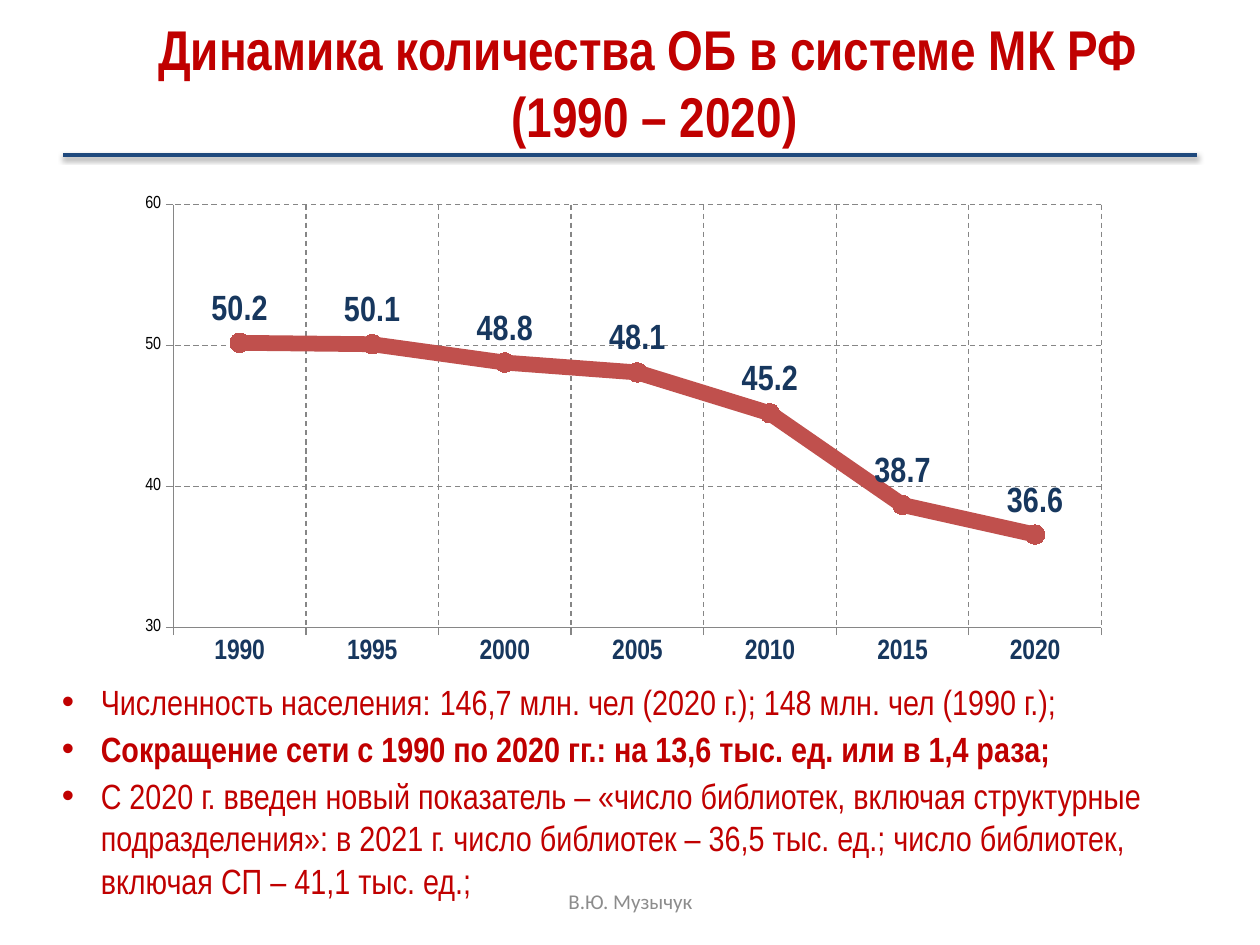
from lxml import etree
from pptx import Presentation
from pptx.chart.data import CategoryChartData
from pptx.dml.color import RGBColor
from pptx.enum.chart import XL_CHART_TYPE as ChartType, XL_LABEL_POSITION as LabelPosition
from pptx.enum.chart import XL_MARKER_STYLE as MarkerStyle, XL_TICK_MARK as TickMark
from pptx.enum.dml import MSO_LINE
from pptx.enum.shapes import MSO_CONNECTOR
from pptx.enum.text import MSO_ANCHOR, MSO_AUTO_SIZE, PP_ALIGN
from pptx.oxml import parse_xml
from pptx.oxml.ns import nsdecls, qn
from pptx.util import Inches, Pt

RED = RGBColor(0xC0, 0x00, 0x00)
NAVY = RGBColor(0x17, 0x37, 0x5E)
BLUE = RGBColor(0x1F, 0x49, 0x7D)
SERIES_RED = RGBColor(0xC0, 0x50, 0x4D)
GRID_GRAY = RGBColor(0x86, 0x86, 0x86)
FOOTER_GRAY = RGBColor(0x8C, 0x8C, 0x8C)
BLACK = RGBColor(0x00, 0x00, 0x00)
NARROW = "Arial Narrow"


def set_font(font, name, size, color, bold=False):
    font.name = name
    font.size = Pt(size)
    font.bold = bold
    font.color.rgb = color


def place(shape, left, top, width, height):
    shape.left, shape.top = Inches(left), Inches(top)
    shape.width, shape.height = Inches(width), Inches(height)


presentation = Presentation()
presentation.slide_width = Inches(10)
presentation.slide_height = Inches(7.5)
slide = presentation.slides.add_slide(presentation.slide_layouts[1])

title = slide.shapes.title
place(title, 0.39, 0.06, 9.61, 1.18)
title.text_frame.text = "Динамика количества ОБ в системе МК РФ \n(1990 – 2020)"
title.text_frame.auto_size = MSO_AUTO_SIZE.NONE
title.text_frame.vertical_anchor = MSO_ANCHOR.MIDDLE
for paragraph in title.text_frame.paragraphs:
    paragraph.alignment = PP_ALIGN.CENTER
    set_font(paragraph.font, NARROW, 32, RED, bold=True)

rule = slide.shapes.add_connector(
    MSO_CONNECTOR.STRAIGHT, Inches(0.5), Inches(1.23), Inches(9.5), Inches(1.23))
rule.line.color.rgb = BLUE
rule.line.width = Pt(2)
rule_properties = rule._element.spPr
effects = etree.SubElement(rule_properties, qn("a:effectLst"))
shadow = etree.SubElement(
    effects, qn("a:outerShdw"), blurRad=str(Pt(3.1)), dist=str(Pt(1.6)),
    dir="5400000", rotWithShape="0")
shadow_color = etree.SubElement(shadow, qn("a:srgbClr"), val="000000")
etree.SubElement(shadow_color, qn("a:alpha"), val="38000")

chart_data = CategoryChartData(number_format="0.0")
chart_data.categories = [str(year) for year in range(1990, 2021, 5)]
chart_data.add_series("Series 1", (50.2, 50.1, 48.8, 48.1, 45.2, 38.7, 36.6))
chart = slide.shapes.add_chart(
    ChartType.LINE_MARKERS, Inches(0.98), Inches(1.47), Inches(7.92), Inches(3.86),
    chart_data).chart
chart.has_title = False
chart.has_legend = False
set_font(chart.font, "Calibri", 10, BLACK)

category_axis, value_axis = chart.category_axis, chart.value_axis
value_axis.minimum_scale, value_axis.maximum_scale = 30, 60
value_axis.major_unit = 10
value_axis.tick_labels.number_format = "0"
value_axis.tick_labels.number_format_is_linked = False
set_font(category_axis.tick_labels.font, NARROW, 16, NAVY, bold=True)
set_font(value_axis.tick_labels.font, NARROW, 10, BLACK)
for axis in (category_axis, value_axis):
    axis.major_tick_mark = TickMark.OUTSIDE
    axis.minor_tick_mark = TickMark.NONE
    axis.format.line.color.rgb = GRID_GRAY
    axis.has_major_gridlines = True
    gridline = axis.major_gridlines.format.line
    gridline.color.rgb = GRID_GRAY
    gridline.width = Pt(0.75)
    gridline.dash_style = MSO_LINE.DASH

plot = chart.plots[0]
plot.vary_by_categories = False
series = plot.series[0]
series.smooth = False
series.format.line.color.rgb = SERIES_RED
series.format.line.width = Pt(9)
series.marker.style = MarkerStyle.CIRCLE
series.marker.size = 11
series.marker.format.fill.solid()
series.marker.format.fill.fore_color.rgb = SERIES_RED
series.marker.format.line.color.rgb = SERIES_RED
labels = series.data_labels
labels.show_value = True
labels.position = LabelPosition.ABOVE
labels.number_format = "0.0"
labels.number_format_is_linked = False
set_font(labels.font, NARROW, 20, NAVY, bold=True)

plot_area = chart._chartSpace.find(".//" + qn("c:plotArea"))
for layout in plot_area.findall(qn("c:layout")):
    plot_area.remove(layout)
plot_area.insert(0, parse_xml(
    f'<c:layout {nsdecls("c")}><c:manualLayout><c:layoutTarget val="inner"/>'
    '<c:xMode val="edge"/><c:yMode val="edge"/><c:x val="0.05"/><c:y val="0.04"/>'
    '<c:w val="0.93"/><c:h val="0.87"/></c:manualLayout></c:layout>'))

facts = [
    ("Численность населения: \t146,7 млн. чел (2020 г.); 148 млн. чел (1990 г.);", False),
    ("Сокращение сети с 1990 по 2020 гг.: на 13,6 тыс. ед. или в 1,4 раза;", True),
    ("С 2020 г. введен новый показатель – «число библиотек, включая структурные "
     "подразделения»: в 2021 г. число библиотек – 36,5 тыс. ед.; число библиотек, "
     "включая СП – 41,1 тыс. ед.;", False),
]
body = slide.placeholders[1]
place(body, 0.39, 5.35, 9.41, 1.87)
body.text_frame.text = "\n".join(text for text, bold in facts)
body.text_frame.auto_size = MSO_AUTO_SIZE.NONE
for paragraph, (text, bold) in zip(body.text_frame.paragraphs, facts):
    paragraph.space_before = Pt(3)
    set_font(paragraph.font, NARROW, 20, RED, bold)
    properties = paragraph._p.get_or_add_pPr()
    properties.set("marL", str(Inches(0.31)))
    properties.set("indent", str(Inches(-0.31)))

footer = slide.shapes.add_textbox(Inches(3.42), Inches(6.95), Inches(3.17), Inches(0.4))
footer.text_frame.word_wrap = True
footer.text_frame.vertical_anchor = MSO_ANCHOR.MIDDLE
footer.text_frame.text = "В.Ю. Музычук"
paragraph = footer.text_frame.paragraphs[0]
paragraph.alignment = PP_ALIGN.CENTER
set_font(paragraph.font, "Calibri", 12, FOOTER_GRAY)

presentation.save("out.pptx")
